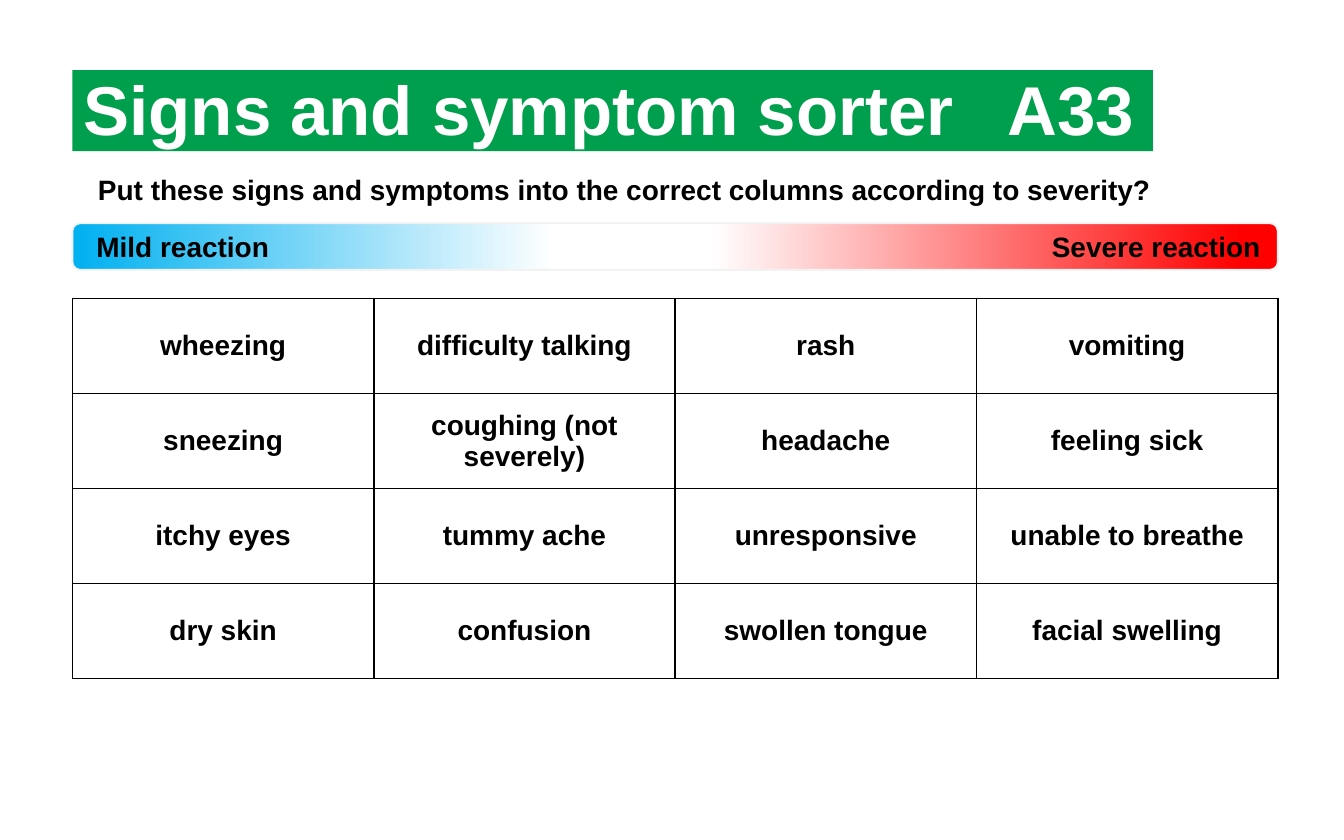
from lxml import etree
from pptx import Presentation
from pptx.dml.color import RGBColor
from pptx.enum.shapes import MSO_SHAPE
from pptx.enum.text import MSO_ANCHOR, PP_ALIGN
from pptx.oxml.ns import qn
from pptx.util import Pt

RECTANGLE = MSO_SHAPE.RECTANGLE
ROUNDED = MSO_SHAPE.ROUNDED_RECTANGLE
LEFT, CENTER = PP_ALIGN.LEFT, PP_ALIGN.CENTER
TOP, MIDDLE = MSO_ANCHOR.TOP, MSO_ANCHOR.MIDDLE

COLORS = {
    "banner": "009F4D",
    "white": "FFFFFF",
    "black": "000000",
    "mild": "00B0F0",
    "severe": "FF0000",
    "outline": "F2F2F2",
}
SEVERITY_STOPS = [(0, "mild"), (40, "white"), (53, "white"), (97, "severe")]
SYMPTOMS = [
    ["wheezing", "difficulty talking", "rash", "vomiting"],
    ["sneezing", "coughing (not severely)", "headache", "feeling sick"],
    ["itchy eyes", "tummy ache", "unresponsive", "unable to breathe"],
    ["dry skin", "confusion", "swollen tongue", "facial swelling"],
]


def rgb(name):
    return RGBColor.from_string(COLORS[name])


def write(frame, text, size=15, color="black", align=LEFT):
    paragraph = frame.paragraphs[0]
    paragraph.alignment = align
    run = paragraph.add_run()
    run.text = text
    for key, value in {"name": "Arial", "size": Pt(size), "bold": True}.items():
        setattr(run.font, key, value)
    run.font.color.rgb = rgb(color)
    return paragraph


def add_label(slide, box, text):
    frame = slide.shapes.add_textbox(*map(Pt, box)).text_frame
    frame.word_wrap = True
    write(frame, text)


def add_banner(slide, box, title):
    banner = slide.shapes.add_shape(RECTANGLE, *map(Pt, box))
    banner.shadow.inherit = False
    banner.fill.solid()
    banner.fill.fore_color.rgb = rgb("banner")
    banner.line.fill.background()
    frame = banner.text_frame
    layout = {"margin_left": Pt(6), "margin_right": Pt(6), "margin_top": Pt(3),
              "margin_bottom": Pt(3), "vertical_anchor": TOP, "word_wrap": True}
    for key, value in layout.items():
        setattr(frame, key, value)
    properties = frame.paragraphs[0]._p.get_or_add_pPr()
    tabs = etree.SubElement(properties, qn("a:tabLst"))
    etree.SubElement(tabs, qn("a:tab"), pos=str(Pt(495)), algn="l")
    heading = write(frame, title, 37, "white")
    heading.line_spacing = 0.9
    heading.space_after = Pt(4.1)


def add_severity_scale(slide, box, mild, severe):
    left, top, width, height = box
    scale = slide.shapes.add_shape(ROUNDED, *map(Pt, box))
    scale.shadow.inherit = False
    scale.line.color.rgb = rgb("outline")
    scale.line.width = Pt(1)
    scale.fill.gradient()
    scale.fill.gradient_angle = 0
    stops = scale._element.spPr.find(qn("a:gradFill")).find(qn("a:gsLst"))
    for stop in list(stops):
        stops.remove(stop)
    for percent, color in SEVERITY_STOPS:
        stop = etree.SubElement(stops, qn("a:gs"), pos=str(percent * 1000))
        etree.SubElement(stop, qn("a:srgbClr"), val=COLORS[color])
    label_width = 152.6
    add_label(slide, (left + 5.8, top, label_width, height), mild)
    add_label(slide, (left + width - 128.2, top, label_width, height), severe)


def add_borders(cell):
    properties = cell._tc.get_or_add_tcPr()
    for side in ("lnL", "lnR", "lnT", "lnB"):
        border = etree.SubElement(properties, qn(f"a:{side}"), w=str(Pt(1)))
        fill = etree.SubElement(border, qn("a:solidFill"))
        etree.SubElement(fill, qn("a:srgbClr"), val=COLORS["black"])


def add_symptom_grid(slide, box, symptoms):
    width, height = box[2:]
    rows, columns = len(symptoms), len(symptoms[0])
    grid = slide.shapes.add_table(rows, columns, *map(Pt, box)).table
    grid.first_row = grid.horz_banding = False
    for column in grid.columns:
        column.width = Pt(width / columns)
    for row, names in zip(grid.rows, symptoms):
        row.height = Pt(height / rows)
        for cell, symptom in zip(row.cells, names):
            add_borders(cell)
            cell.fill.background()
            cell.vertical_anchor = MIDDLE
            write(cell.text_frame, symptom, align=CENTER)


def main():
    deck = Presentation()
    deck.slide_width, deck.slide_height = Pt(720), Pt(450)
    slide = deck.slides.add_slide(deck.slide_layouts[6])
    left, width = 38.8, 645.8
    add_banner(slide, (left, 37.6, 578.8, 43.4), "Signs and symptom sorter\tA33")
    add_label(slide, (45.4, 88.8, 658, 25.2),
              "Put these signs and symptoms into the correct columns according to severity?")
    add_severity_scale(slide, (left, 119.6, width, 25), "Mild reaction", "Severe reaction")
    add_symptom_grid(slide, (left, 160, width, 203.6), SYMPTOMS)
    deck.save("out.pptx")


if __name__ == "__main__":
    main()
